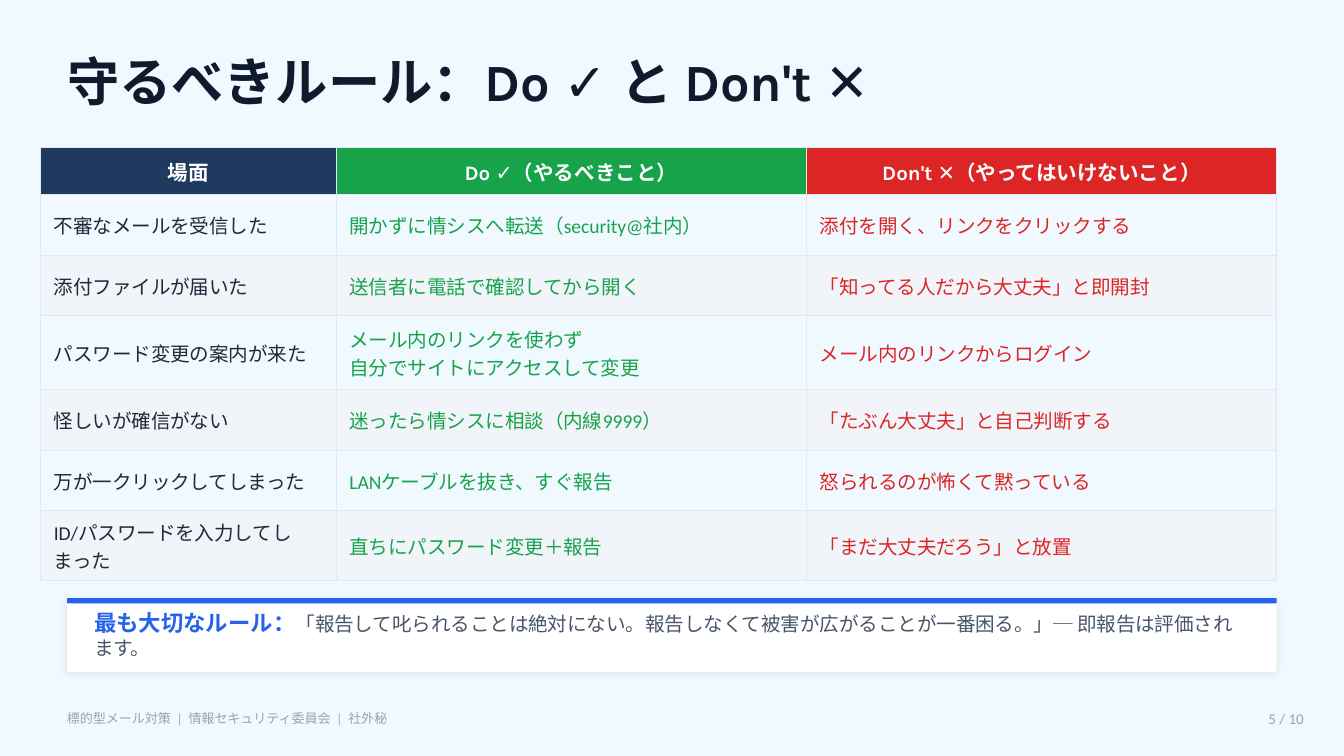
from lxml import etree
from pptx import Presentation
from pptx import util as u
from pptx.dml.color import RGBColor
from pptx.enum import shapes, text
from pptx.oxml import ns

HUES = {
    "sky": "F0F9FF", "ink": "0F1B2D", "navy": "1E3A5F", "green": "16A34A",
    "red": "DC2626", "dark": "1E293B", "band": "F1F5F9", "rule": "E2E8F0",
    "white": "FFFFFF", "blue": "2563EB", "slate": "475569", "gray": "94A3B8",
}
HEAD = "Karla"
BODY = "Calibri"
COLS = [2.2, 3.5, 3.5]
TALLS = [0.35, 0.45, 0.45, 0.55, 0.45, 0.45, 0.45]
HEADS = ["場面", "Do ✓（やるべきこと）", "Don't ✕（やってはいけないこと）"]
RULES = [
    ["不審なメールを受信した", "開かずに情シスへ転送（security@社内）",
     "添付を開く、リンクをクリックする"],
    ["添付ファイルが届いた", "送信者に電話で確認してから開く",
     "「知ってる人だから大丈夫」と即開封"],
    ["パスワード変更の案内が来た",
     "メール内のリンクを使わず\n自分でサイトにアクセスして変更",
     "メール内のリンクからログイン"],
    ["怪しいが確信がない", "迷ったら情シスに相談（内線9999）",
     "「たぶん大丈夫」と自己判断する"],
    ["万が一クリックしてしまった", "LANケーブルを抜き、すぐ報告",
     "怒られるのが怖くて黙っている"],
    ["ID/パスワードを入力してしまった", "直ちにパスワード変更＋報告",
     "「まだ大丈夫だろう」と放置"],
]


def rgb(hue):
    return RGBColor.from_string(HUES[hue])


def place(box):
    return [u.Inches(n) for n in box]


def paint(item, hue):
    item.fill.solid()
    item.fill.fore_color.rgb = rgb(hue)


def write(para, words, size=10.5, face=BODY, hue="dark", bold=False, align="LEFT"):
    para.alignment = getattr(text.PP_ALIGN, align)
    run = para.add_run()
    run.text = words
    font = run.font
    font.size, font.name, font.bold = u.Pt(size), face, bold
    font.color.rgb = rgb(hue)


def set_frame(frame, inset):
    frame.word_wrap = True
    frame.auto_size = text.MSO_AUTO_SIZE.NONE
    frame.vertical_anchor = text.MSO_ANCHOR.MIDDLE
    if inset is not None:
        frame.margin_left = frame.margin_right = u.Inches(inset)
        frame.margin_top = frame.margin_bottom = u.Inches(inset)
    return frame.paragraphs[0]


def add_label(slide, box, inset=None):
    return set_frame(slide.shapes.add_textbox(*place(box)).text_frame, inset)


def add_title(slide, words):
    title = slide.shapes.title
    title.left, title.top, title.width, title.height = place([0.5, 0.3, 9, 0.6])
    para = set_frame(title.text_frame, 0)
    write(para, words, size=28, face=HEAD, hue="ink", bold=True)


def add_bar(slide, box, hue):
    bar = slide.shapes.add_shape(shapes.MSO_SHAPE.RECTANGLE, *place(box))
    bar.shadow.inherit = False
    paint(bar, hue)
    bar.line.fill.background()
    return bar


def add_shade(bar):
    effect = bar._element.spPr.find(ns.qn("a:effectLst"))
    shade = etree.SubElement(
        effect, ns.qn("a:outerShdw"), blurRad=str(u.Pt(4)), dist=str(u.Pt(1)),
        dir=str(135 * 60000), algn="bl", rotWithShape="0")
    color = etree.SubElement(shade, ns.qn("a:srgbClr"), val="000000")
    etree.SubElement(color, ns.qn("a:alpha"), val="8000")


def add_edges(cell):
    props = cell._tc.get_or_add_tcPr()
    for spot, side in enumerate(["lnL", "lnR", "lnT", "lnB"]):
        line = etree.Element(ns.qn("a:" + side), w=str(u.Pt(0.5)))
        fill = etree.SubElement(line, ns.qn("a:solidFill"))
        etree.SubElement(fill, ns.qn("a:srgbClr"), val=HUES["rule"])
        props.insert(spot, line)


def fill_cell(cell, words, fill, **style):
    cell.vertical_anchor = text.MSO_ANCHOR.MIDDLE
    frame = cell.text_frame
    for n, line in enumerate(words.split("\n")):
        para = frame.add_paragraph() if n else frame.paragraphs[0]
        write(para, line, **style)
    if fill:
        paint(cell, fill)
    else:
        cell.fill.background()
    add_edges(cell)


def add_rules(slide):
    box = place([0.3, 1.1, sum(COLS), sum(TALLS)])
    table = slide.shapes.add_table(len(TALLS), len(COLS), *box).table
    table.horz_banding = False
    for col, wide in zip(table.columns, COLS):
        col.width = u.Inches(wide)
    for row, tall in zip(table.rows, TALLS):
        row.height = u.Inches(tall)
    for c, fill in enumerate(["navy", "green", "red"]):
        fill_cell(table.cell(0, c), HEADS[c], fill, size=11, face=HEAD,
                  hue="white", bold=True, align="CENTER")
    for r, rule in enumerate(RULES, 1):
        band = None if r % 2 else "band"
        for c, hue in enumerate(["dark", "green", "red"]):
            fill_cell(table.cell(r, c), rule[c], band, hue=hue)


def add_key(slide):
    add_shade(add_bar(slide, [0.5, 4.45, 9, 0.55], "white"))
    add_bar(slide, [0.5, 4.45, 9, 0.04], "blue")
    para = add_label(slide, [0.7, 4.52, 8.6, 0.4], inset=0)
    write(para, "最も大切なルール：", size=12, face=HEAD, hue="blue", bold=True)
    write(para, "「報告して叱られることは絶対にない。報告しなくて被害が広がることが"
          "一番困る。」─ 即報告は評価されます。", hue="slate")


def add_foot(slide):
    page = add_label(slide, [9.1, 5.22, 0.7, 0.25])
    write(page, "5 / 10", size=8, hue="gray", align="RIGHT")
    note = add_label(slide, [0.4, 5.22, 5.5, 0.25])
    write(note, "標的型メール対策  |  情報セキュリティ委員会  |  社外秘",
          size=7, hue="gray")


def main():
    deck = Presentation()
    deck.slide_width = u.Inches(10)
    deck.slide_height = deck.slide_width * 9 // 16
    slide = deck.slides.add_slide(deck.slide_layouts[5])
    paint(slide.background, "sky")
    add_title(slide, "守るべきルール：Do ✓ と Don't ✕")
    add_rules(slide)
    add_key(slide)
    add_foot(slide)
    deck.save("out.pptx")


if __name__ == "__main__":
    main()
